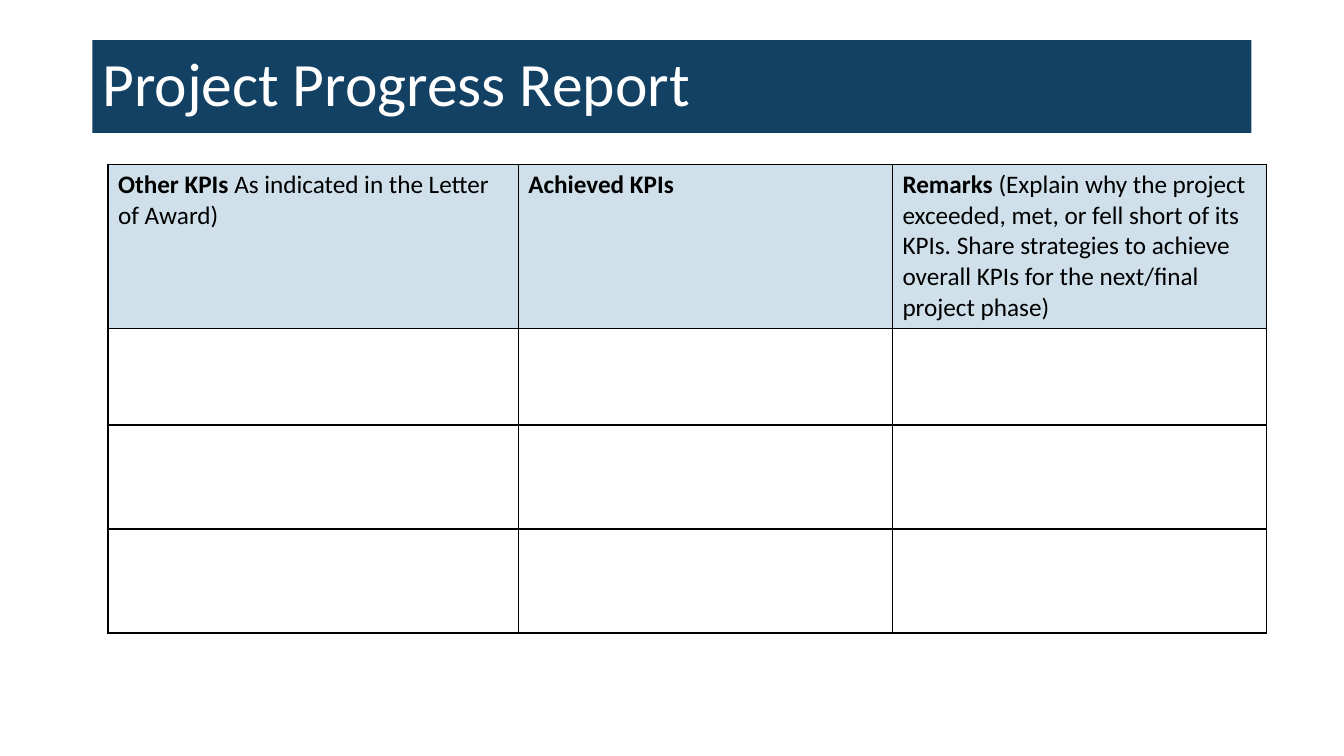
from dataclasses import dataclass

from lxml.etree import SubElement
from pptx import Presentation
from pptx.dml.color import RGBColor
from pptx.enum.shapes import MSO_SHAPE
from pptx.enum.text import MSO_ANCHOR, PP_ALIGN
from pptx.oxml.ns import qn
from pptx.util import Cm, Pt


@dataclass(frozen=True)
class Theme:
    """Colours, font and sizes of the report."""
    font: str = "Calibri"
    navy: str = "134163"
    pale: str = "CFE0EA"
    black: str = "000000"
    white: str = "FFFFFF"
    title_size: int = 44
    body_size: int = 18
    border: int = 1


THEME = Theme()
HEADERS = [
    ("Other KPIs ", "As indicated in the Letter of Award)"),
    ("Achieved KPIs", ""),
    ("Remarks ", "(Explain why the project exceeded, met, or fell short of its KPIs. "
                 "Share strategies to achieve overall KPIs for the next/final project phase)"),
]
COLUMN_WIDTHS = [10.34, 9.43, 9.43]
ROW_HEIGHTS = [4.12, 2.44, 2.62, 2.62]


def style_run(r, size, color, bold=False):
    """Apply the theme font to a run."""
    r.font.name = THEME.font
    r.font.size = Pt(size)
    r.font.bold = bold
    r.font.color.rgb = RGBColor.from_string(color)


def add_title_bar(s, left, top, width, height, text):
    """Draw the filled title bar."""
    sp = s.shapes.add_shape(MSO_SHAPE.RECTANGLE, Cm(left), Cm(top), Cm(width), Cm(height))
    sp.shadow.inherit = False
    sp.fill.solid()
    sp.fill.fore_color.rgb = RGBColor.from_string(THEME.navy)
    sp.line.fill.background()
    tf = sp.text_frame
    tf.word_wrap = True
    tf.vertical_anchor = MSO_ANCHOR.MIDDLE
    tf.text = text
    p = tf.paragraphs[0]
    p.alignment = PP_ALIGN.LEFT
    p.line_spacing = 0.9
    style_run(p.runs[0], THEME.title_size, THEME.white)


def add_borders(cell):
    """Give a cell a solid line on each side."""
    tcPr = cell._tc.get_or_add_tcPr()
    for side in ("a:lnL", "a:lnR", "a:lnT", "a:lnB"):
        ln = SubElement(tcPr, qn(side), w=str(Pt(THEME.border)))
        fill = SubElement(ln, qn("a:solidFill"))
        SubElement(fill, qn("a:srgbClr"), val=THEME.black)


def add_kpi_table(s, left, top, width, height):
    """Draw the KPI table with its header row and blank rows."""
    table = s.shapes.add_table(len(ROW_HEIGHTS), len(COLUMN_WIDTHS),
                               Cm(left), Cm(top), Cm(width), Cm(height)).table
    table.first_row = False
    table.horz_banding = False
    for column, share in zip(table.columns, COLUMN_WIDTHS):
        column.width = Cm(width * share / sum(COLUMN_WIDTHS))
    for row, share in zip(table.rows, ROW_HEIGHTS):
        row.height = Cm(height * share / sum(ROW_HEIGHTS))
    for cell in table.iter_cells():
        add_borders(cell)
        cell.fill.background()
    for cell, (label, detail) in zip(table.rows[0].cells, HEADERS):
        cell.fill.solid()
        cell.fill.fore_color.rgb = RGBColor.from_string(THEME.pale)
        p = cell.text_frame.paragraphs[0]
        for text, bold in ((label, True), (detail, False)):
            if text:
                r = p.add_run()
                r.text = text
                style_run(r, THEME.body_size, THEME.black, bold)


def main():
    """Build and save the progress report slide."""
    prs = Presentation()
    prs.slide_width, prs.slide_height = Cm(33.87), Cm(19.05)
    s = prs.slides.add_slide(prs.slide_layouts[6])
    add_title_bar(s, 2.33, 1.01, 29.21, 2.34, "Project Progress Report")
    add_kpi_table(s, 2.72, 4.14, sum(COLUMN_WIDTHS), sum(ROW_HEIGHTS))
    prs.save("out.pptx")


if __name__ == "__main__":
    main()
